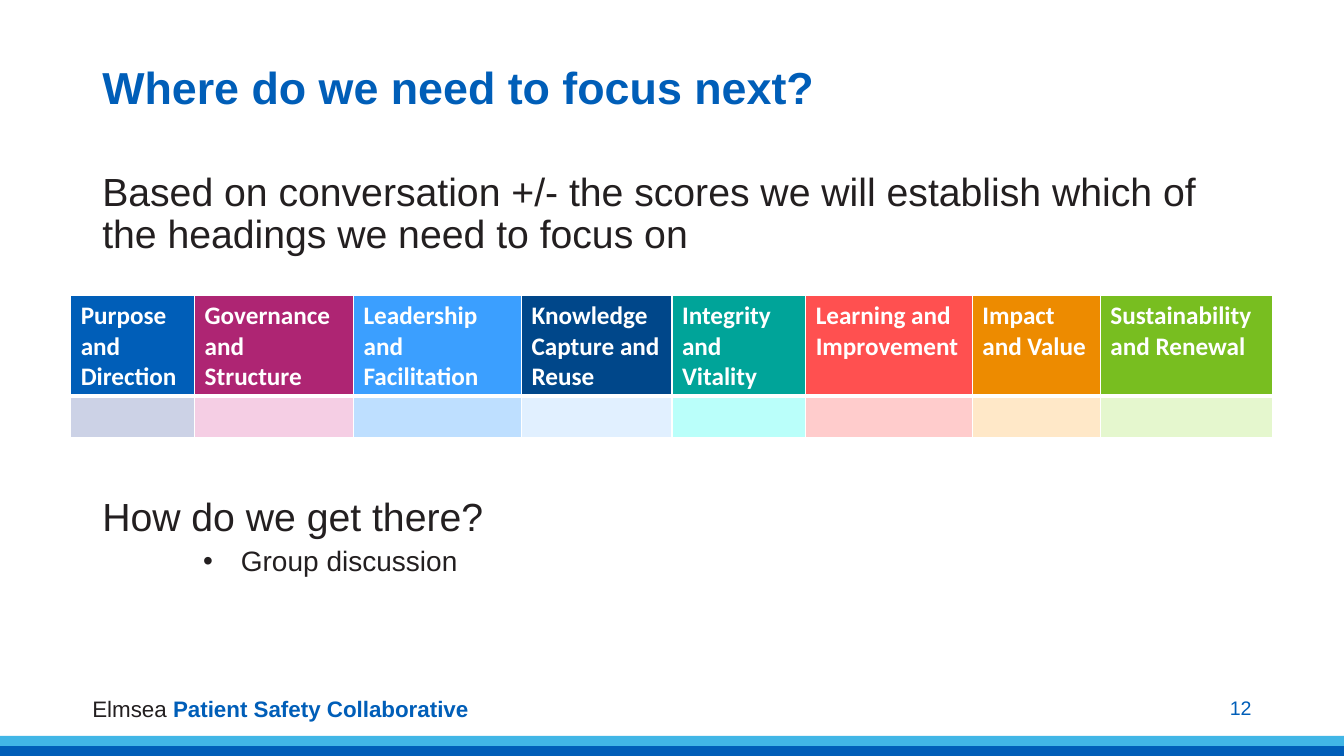
from lxml import etree
from pptx import Presentation
from pptx.dml.color import RGBColor
from pptx.enum.shapes import MSO_SHAPE
from pptx.enum.text import MSO_ANCHOR, PP_ALIGN
from pptx.oxml.ns import qn
from pptx.util import Pt

RECTANGLE = MSO_SHAPE.RECTANGLE
TOP, MIDDLE = MSO_ANCHOR.TOP, MSO_ANCHOR.MIDDLE
LEFT, RIGHT = PP_ALIGN.LEFT, PP_ALIGN.RIGHT

SLIDE_W, SLIDE_H = 960, 540
MARGIN_X, CONTENT_W = 66, 828
BAND_H = 7.2
FOOTER_Y, FOOTER_H = 496.8, 19.5
COLORS = {"blue": "005EB8", "sky": "41B6E6", "ink": "231F20", "white": "FFFFFF"}

# Heading, column width, header fill, answer fill
FOCUS_AREAS = [
    ("Purpose and Direction", 88.5, "005EB8", "CCD2E6"),
    ("Governance and Structure", 113.5, "AE2573", "F5CEE4"),
    ("Leadership and Facilitation", 120, "3B9FFF", "BEDFFF"),
    ("Knowledge Capture and Reuse", 107.5, "00478A", "E1F0FF"),
    ("Integrity and Vitality", 95.5, "00A499", "BAFFFA"),
    ("Learning and Improvement", 119, "FF5050", "FFCCCC"),
    ("Impact and Value", 91.5, "ED8B00", "FFE8C8"),
    ("Sustainability and Renewal", 123, "78BE20", "E5F7CE"),
]


class SlideBuilder:
    """Holds the style and the current slide."""

    def __init__(self, slide, font="Arial", table_font="Calibri"):
        self.slide = slide
        self.font = font
        self.table_font = table_font

    def band(self, y, color):
        bar = self.slide.shapes.add_shape(RECTANGLE, 0, Pt(y), Pt(SLIDE_W), Pt(BAND_H))
        bar.shadow.inherit = False
        bar.fill.solid()
        bar.fill.fore_color.rgb = RGBColor.from_string(COLORS[color])
        bar.line.fill.background()

    def text_frame(self, x, y, w, h, insets=(7.2, 3.6, 7.2, 3.6), anchor=TOP):
        frame = self.slide.shapes.add_textbox(Pt(x), Pt(y), Pt(w), Pt(h)).text_frame
        frame.word_wrap = True
        frame.vertical_anchor = anchor
        (frame.margin_left, frame.margin_top,
         frame.margin_right, frame.margin_bottom) = map(Pt, insets)
        return frame

    def run(self, paragraph, text, size, color="ink", bold=False, font=None):
        run = paragraph.add_run()
        run.text = text
        run.font.name = font or self.font
        run.font.size = Pt(size)
        run.font.bold = bold
        run.font.color.rgb = RGBColor.from_string(COLORS[color])

    def paragraph(self, frame, runs, before=0, spacing=1.0, align=LEFT):
        first = frame.paragraphs[0]
        paragraph = frame.add_paragraph() if first.runs else first
        paragraph.alignment = align
        paragraph.line_spacing = spacing
        paragraph.space_before = Pt(before)
        for run in runs:
            self.run(paragraph, *run)
        return paragraph

    def bullet(self, paragraph, indent, hanging):
        props = paragraph._p.get_or_add_pPr()
        props.set("marL", str(Pt(indent)))
        props.set("indent", str(-Pt(hanging)))
        etree.SubElement(props, qn("a:buFont"), typeface=self.font)
        etree.SubElement(props, qn("a:buChar"), char="•")

    def cell(self, cell, fill, borders):
        props = cell._tc.get_or_add_tcPr()
        for side, width in borders.items():
            line = etree.SubElement(props, qn(f"a:ln{side}"), w=str(Pt(width)))
            solid = etree.SubElement(line, qn("a:solidFill"))
            etree.SubElement(solid, qn("a:srgbClr"), val=COLORS["white"])
        cell.fill.solid()
        cell.fill.fore_color.rgb = RGBColor.from_string(fill)

    def focus_table(self, x, y, areas, header_h, answer_h):
        width = sum(area[1] for area in areas)
        table = self.slide.shapes.add_table(
            2, len(areas), Pt(x), Pt(y), Pt(width), Pt(header_h + answer_h)).table
        table.horz_banding = False
        table.rows[0].height, table.rows[1].height = Pt(header_h), Pt(answer_h)
        for col, (heading, col_w, header_fill, answer_fill) in enumerate(areas):
            table.columns[col].width = Pt(col_w)
            header, answer = table.cell(0, col), table.cell(1, col)
            self.cell(header, header_fill, {"L": 1, "R": 1, "T": 1, "B": 3})
            self.cell(answer, answer_fill, {"L": 1, "R": 1, "T": 3, "B": 1})
            self.run(header.text_frame.paragraphs[0], heading, 18, "white", True,
                     self.table_font)


def main():
    prs = Presentation()
    prs.slide_width, prs.slide_height = Pt(SLIDE_W), Pt(SLIDE_H)
    builder = SlideBuilder(prs.slides.add_slide(prs.slide_layouts[6]))

    # Bands along the bottom edge
    for level, color in enumerate(("blue", "sky"), start=1):
        builder.band(SLIDE_H - level * BAND_H, color)

    # Footer and slide number
    footer = builder.text_frame(MARGIN_X, FOOTER_Y, 381.5, FOOTER_H, (0, 0, 0, 0))
    builder.paragraph(footer, [("Elmsea ", 16),
                               ("Patient Safety Collaborative", 16, "blue", True)])
    number = builder.text_frame(839.5, FOOTER_Y, 54.5, FOOTER_H, (0, 0, 0, 0))
    builder.paragraph(number, [("12", 14, "blue")], align=RIGHT)

    # Title, raised by a deep bottom inset
    title = builder.text_frame(MARGIN_X, 28.8, CONTENT_W, 104.4,
                               (7.2, 3.6, 7.2, 37), MIDDLE)
    builder.paragraph(title, [("Where do we need to focus next?", 32, "blue", True)],
                      spacing=0.9)

    # Body, with room for the table between its two parts
    body = builder.text_frame(MARGIN_X, 119.5, CONTENT_W, 342.5)
    builder.paragraph(body, [("Based on conversation +/- the scores we will establish "
                              "which of the headings we need to focus on", 28)],
                      before=10, spacing=0.9)
    builder.paragraph(body, [("How do we get there?", 28)], before=172, spacing=0.9)
    discussion = builder.paragraph(body, [("Group discussion", 20)], before=5, spacing=0.9)
    builder.bullet(discussion, indent=99, hanging=27)

    # Focus areas
    builder.focus_table(50.5, 211, FOCUS_AREAS, header_h=72, answer_h=29.5)

    prs.save("out.pptx")


if __name__ == "__main__":
    main()
